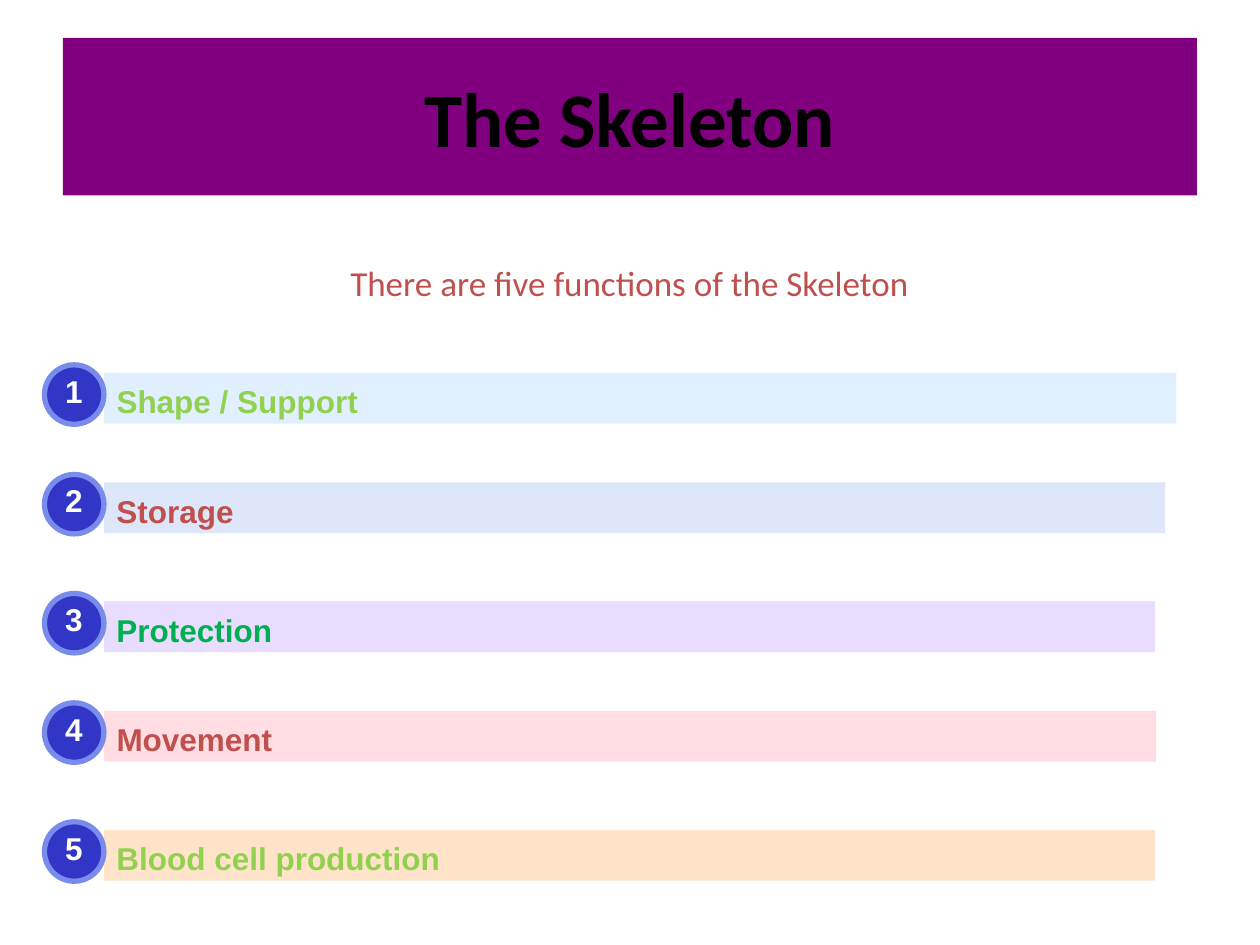
from pptx import Presentation
from pptx.dml.color import RGBColor
from pptx.enum.shapes import MSO_SHAPE
from pptx.enum.text import MSO_ANCHOR, PP_ALIGN
from pptx.util import Pt

RECTANGLE, OVAL = MSO_SHAPE.RECTANGLE, MSO_SHAPE.OVAL
LEFT, CENTER = PP_ALIGN.LEFT, PP_ALIGN.CENTER
TOP, MIDDLE = MSO_ANCHOR.TOP, MSO_ANCHOR.MIDDLE

BLACK = RGBColor(0x00, 0x00, 0x00)
WHITE = RGBColor(0xFF, 0xFF, 0xFF)
PURPLE = RGBColor(0x80, 0x00, 0x80)
RED = RGBColor(0xC0, 0x50, 0x4D)
LIME = RGBColor(0x92, 0xD0, 0x50)
GREEN = RGBColor(0x00, 0xB0, 0x50)
BADGE_FILL = RGBColor(0x32, 0x36, 0xC6)
BADGE_LINE = RGBColor(0x79, 0x8C, 0xEC)
PALE_SKY = RGBColor(0xE1, 0xF0, 0xFF)
PALE_BLUE = RGBColor(0xDE, 0xE7, 0xFA)
PALE_VIOLET = RGBColor(0xE8, 0xDD, 0xFF)
PALE_PINK = RGBColor(0xFF, 0xDD, 0xE3)
PALE_ORANGE = RGBColor(0xFF, 0xE4, 0xC9)

# Content
TITLE = "The Skeleton"
SUBTITLE = "There are five functions of the Skeleton"
# Label, text colour, bar colour, bar top, bar width
FUNCTIONS = [
    ("Shape / Support", LIME, PALE_SKY, 213.1, 612.7),
    ("Storage", RED, PALE_BLUE, 275.7, 606.4),
    ("Protection", GREEN, PALE_VIOLET, 343.7, 600.5),
    ("Movement", RED, PALE_PINK, 406.2, 601.2),
    ("Blood cell production", LIME, PALE_ORANGE, 474.2, 600.5),
]

# Layout in points
BAR_LEFT, BAR_HEIGHT = 59.5, 29
BADGE_LEFT, BADGE_SIZE, BADGE_RISE = 25.4, 34, 4.6
NUMBER_LEFT, NUMBER_WIDTH, NUMBER_HEIGHT, NUMBER_RISE = 19.6, 45.4, 36, 5.8
TEXT_DROP = 5.2


def add_filled(shapes, kind, left, top, width, height, color):
    shape = shapes.add_shape(kind, Pt(left), Pt(top), Pt(width), Pt(height))
    shape.shadow.inherit = False
    shape.fill.solid()
    shape.fill.fore_color.rgb = color
    shape.line.fill.background()
    return shape


def write(shape, text, size, color, font="Arial", bold=True, align=CENTER,
          anchor=TOP, top_inset=3.6):
    frame = shape.text_frame
    frame.word_wrap = True
    frame.vertical_anchor = anchor
    frame.margin_top, frame.margin_bottom = Pt(top_inset), Pt(0 if anchor == TOP else 3.6)
    paragraph = frame.paragraphs[0]
    paragraph.alignment = align
    run = paragraph.add_run()
    run.text = text
    run.font.name, run.font.size, run.font.bold = font, Pt(size), bold
    run.font.color.rgb = color


presentation = Presentation()
presentation.slide_width, presentation.slide_height = Pt(720), Pt(540)
slide = presentation.slides.add_slide(presentation.slide_layouts[6])

# Title and subtitle
banner = add_filled(slide.shapes, RECTANGLE, 36, 21.6, 648, 90, PURPLE)
write(banner, TITLE, 44, BLACK, font="Calibri", anchor=MIDDLE)
subtitle = slide.shapes.add_textbox(Pt(64.8), Pt(145.6), Pt(590), Pt(31.5))
write(subtitle, SUBTITLE, 20, RED, font="Calibri", bold=False)

# Coloured bars
for label, text_color, bar_color, top, width in FUNCTIONS:
    bar = add_filled(slide.shapes, RECTANGLE, BAR_LEFT, top, width, BAR_HEIGHT, bar_color)
    write(bar, label, 18, text_color, align=LEFT, top_inset=TEXT_DROP)

# Numbered badges
for number, (_, _, _, top, _) in enumerate(FUNCTIONS, start=1):
    group = slide.shapes.add_group_shape()
    badge = add_filled(group.shapes, OVAL, BADGE_LEFT, top - BADGE_RISE,
                       BADGE_SIZE, BADGE_SIZE, BADGE_FILL)
    badge.line.color.rgb = BADGE_LINE
    badge.line.width = Pt(3)
    number_box = group.shapes.add_textbox(Pt(NUMBER_LEFT), Pt(top - NUMBER_RISE),
                                          Pt(NUMBER_WIDTH), Pt(NUMBER_HEIGHT))
    write(number_box, str(number), 18, WHITE, top_inset=TEXT_DROP)

presentation.save("out.pptx")
